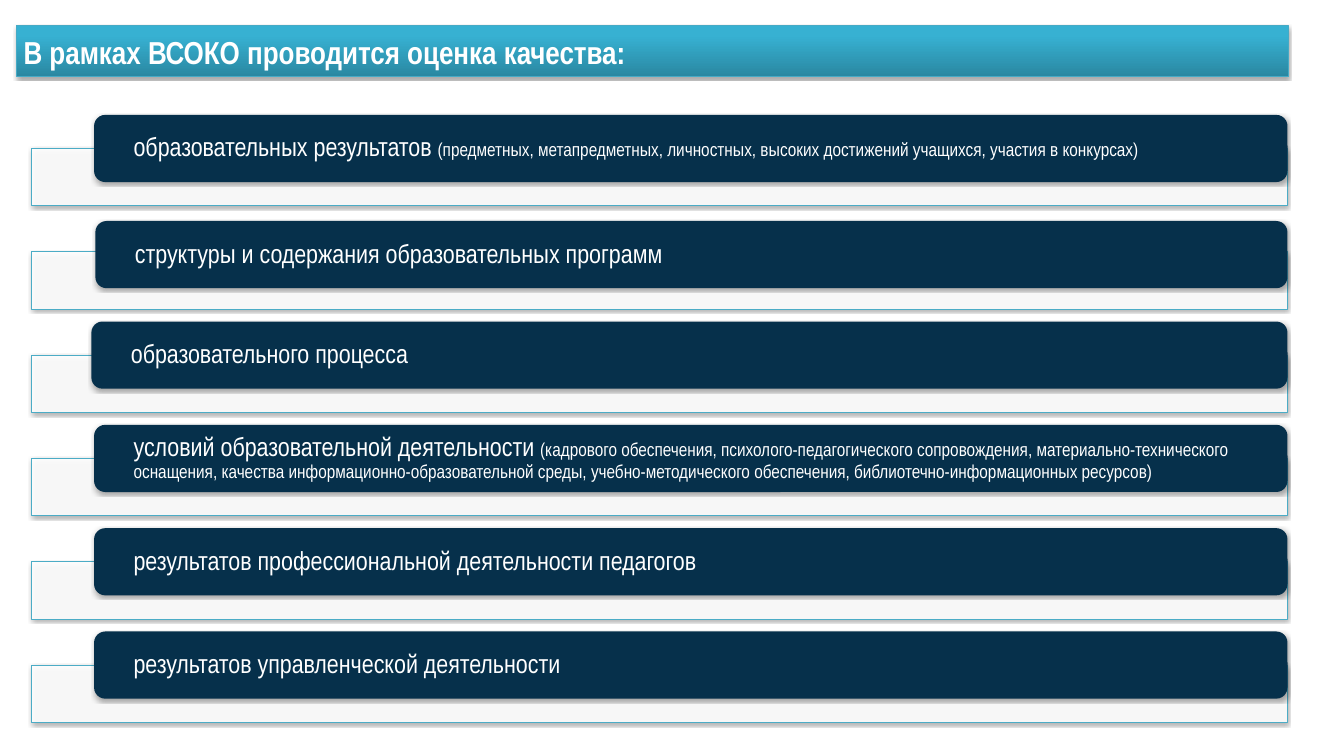
"""Build the slide that lists what the internal quality assessment covers."""
import lxml.etree
import pptx
import pptx.dml.color
import pptx.enum.shapes
import pptx.enum.text
import pptx.oxml
import pptx.oxml.ns
import pptx.util

Pt = pptx.util.Pt
SHAPE = pptx.enum.shapes.MSO_SHAPE
FIRST_TOP, ROW_STEP = 123.1, 110.7
TRAY_DROP = 36
PILL_RIGHT = 1379.5

ROWS = [
    (100.8, 0, "образовательных результатов ",
     "(предметных, метапредметных, личностных, высоких достижений учащихся, участия в конкурсах)"),
    (102.2, 3, "структуры и содержания образовательных программ", ""),
    (97.9, 0, "образовательного процесса", ""),
    (100.8, 0, "условий образовательной деятельности ",
     "(кадрового обеспечения, психолого-педагогического сопровождения, "
     "материально-технического оснащения, качества информационно-образовательной среды, "
     "учебно-методического обеспечения, библиотечно-информационных ресурсов)"),
    (100.8, 0, "результатов профессиональной деятельности педагогов", ""),
    (100.8, 0, "результатов управленческой деятельности", ""),
]


def colour(value):
    return pptx.dml.color.RGBColor.from_string(value)


def add_span(para, text, size=28, bold=False, fill="FFFFFF", font="Arial Narrow"):
    span = para.add_run()
    span.text = text
    span.font.name = font
    span.font.size = Pt(size)
    span.font.bold = bold
    span.font.color.rgb = colour(fill)


def add_child(parent, tag, **attributes):
    return lxml.etree.SubElement(parent, pptx.oxml.ns.qn(tag), attributes)


class Style:
    """Holds the look of the slide and draws each kind of element."""

    dark = "06304B"
    tray_line = "4BACC6"
    title_line = "46AAC5"

    def __init__(self, page):
        self.page = page

    def shadow(self, shape):
        shape.shadow.inherit = False
        effects = shape.element.spPr.find(pptx.oxml.ns.qn("a:effectLst"))
        outer = add_child(effects, "a:outerShdw", blurRad=str(Pt(3.1)), dist=str(Pt(1.8)),
                          dir="5400000", rotWithShape="0")
        black = add_child(outer, "a:srgbClr", val="000000")
        add_child(black, "a:alpha", val="35000")

    def block(self, kind, left, top, width, height, fill):
        shape = self.page.shapes.add_shape(kind, Pt(left), Pt(top), Pt(width), Pt(height))
        shape.fill.solid()
        shape.fill.fore_color.rgb = colour(fill)
        shape.line.fill.background()
        self.shadow(shape)
        return shape

    def frame(self, shape, inset, spacing):
        frame = shape.text_frame
        frame.word_wrap = True
        frame.auto_size = pptx.enum.text.MSO_AUTO_SIZE.NONE
        frame.vertical_anchor = pptx.enum.text.MSO_ANCHOR.MIDDLE
        frame.margin_left = frame.margin_right = Pt(inset)
        frame.margin_top = frame.margin_bottom = 0
        para = frame.paragraphs[0]
        para.alignment = pptx.enum.text.PP_ALIGN.LEFT
        para.line_spacing = spacing
        return para

    def title(self, text):
        title = self.page.shapes.title
        title.left, title.top, title.width, title.height = Pt(18), Pt(27.4), Pt(1362), Pt(54)
        outline = add_child(title.element.spPr, "a:prstGeom", prst="snip2DiagRect")
        add_child(outline, "a:avLst")
        title.fill.gradient()
        title.fill.gradient_angle = 90
        for stop, position, value in zip(title.fill.gradient_stops, (0, 0.8), ("2A88A2", "37B1D2")):
            stop.position = position
            stop.color.rgb = colour(value)
        title.line.color.rgb = colour(self.title_line)
        title.line.width = Pt(0.75)
        self.shadow(title)
        add_span(self.frame(title, 7.2, 1.08), text, size=34, bold=True)

    def tray(self, top):
        tray = self.block(SHAPE.RECTANGLE, 33.8, top, 1345.7, 61.2, "FFFFFF")
        tray.line.color.rgb = colour(self.tray_line)
        tray.line.width = Pt(0.75)
        white = tray.element.spPr.find(pptx.oxml.ns.qn("a:solidFill"))[0]
        add_child(white, "a:alpha", val="90000")

    def pill(self, left, top, text, detail):
        pill = self.block(SHAPE.ROUNDED_RECTANGLE, left, top, PILL_RIGHT - left, 72, self.dark)
        para = self.frame(pill, 38.9, 0.9)
        add_span(para, text)
        if detail:
            add_span(para, detail, size=20)


def main():
    deck = pptx.Presentation()
    deck.slide_width, deck.slide_height = Pt(1440), Pt(810)
    style = Style(deck.slides.add_slide(deck.slide_layouts[5]))
    style.title("В рамках ВСОКО проводится оценка качества:")
    for index, (left, nudge, text, detail) in enumerate(ROWS):
        top = FIRST_TOP + index * ROW_STEP
        style.tray(top + TRAY_DROP)
        style.pill(left, top + nudge, text, detail)
    deck.save("out.pptx")


if __name__ == "__main__":
    main()
